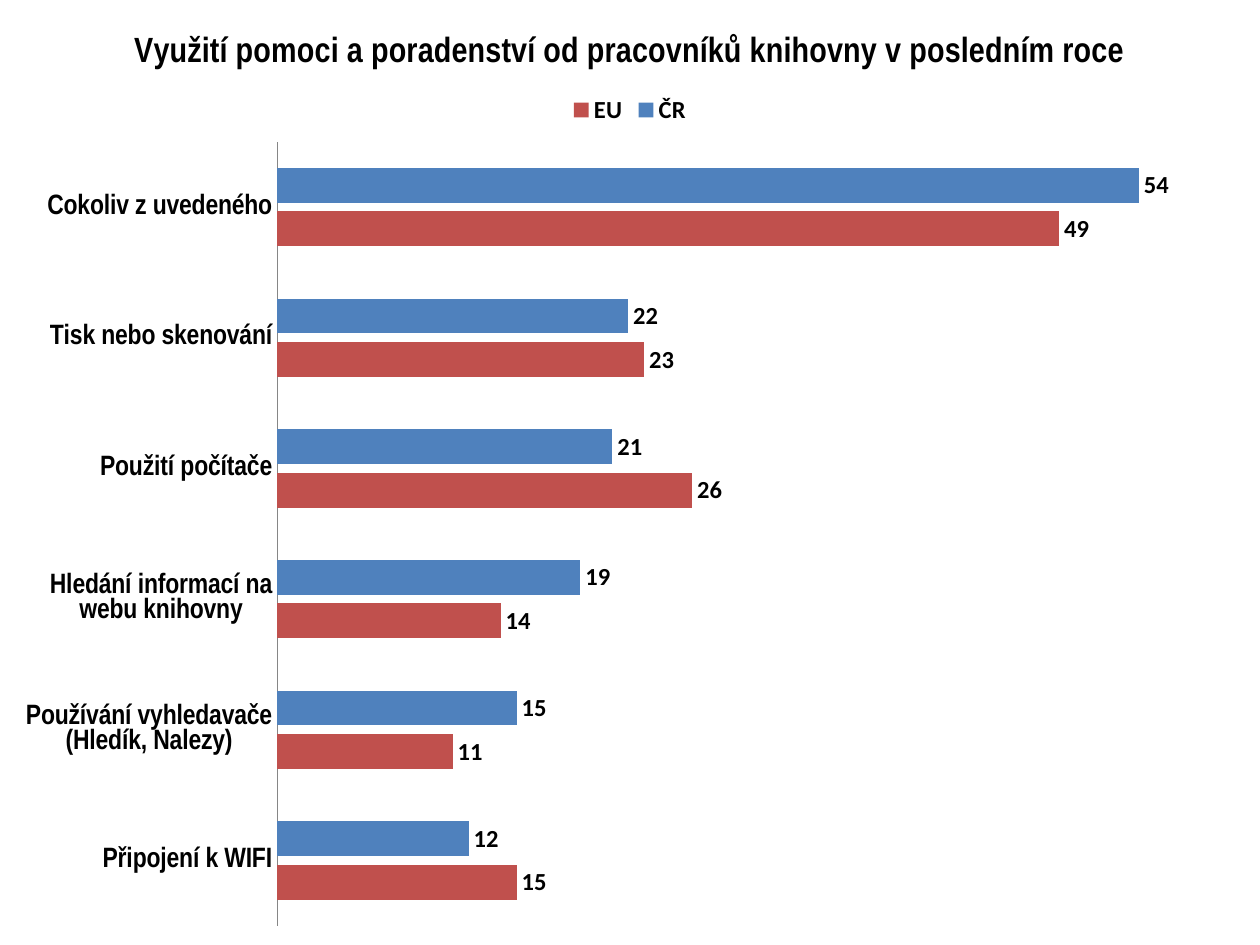
from lxml import etree
from pptx import Presentation
from pptx.chart.data import CategoryChartData
from pptx.dml.color import RGBColor
from pptx.enum.chart import (XL_CHART_TYPE, XL_LABEL_POSITION,
                             XL_LEGEND_POSITION, XL_TICK_MARK)
from pptx.oxml.ns import qn
from pptx.util import Inches, Pt

BAR = XL_CHART_TYPE.BAR_CLUSTERED
OUTSIDE = XL_LABEL_POSITION.OUTSIDE_END
TOP = XL_LEGEND_POSITION.TOP
NONE = XL_TICK_MARK.NONE

BLACK = RGBColor(0x00, 0x00, 0x00)
GREY = RGBColor(0x86, 0x86, 0x86)
BLUE = RGBColor(0x4F, 0x81, 0xBD)
RED = RGBColor(0xC0, 0x50, 0x4D)

TITLE = "Využití pomoci a poradenství od pracovníků knihovny v posledním roce"
HELP = ["Cokoliv z uvedeného", "Tisk nebo skenování", "Použití počítače",
        "Hledání informací na webu knihovny",
        "Používání vyhledavače (Hledík, Nalezy)", "Připojení k WIFI"]
SERIES = [("ČR", BLUE, (54, 22, 21, 19, 15, 12)),
          ("EU", RED, (49, 23, 26, 14, 11, 15))]
# Inner plot area as shares of the chart
AREA = {"x": 0.22, "y": 0.15, "w": 0.76, "h": 0.83}


def style(font, name, size, bold=True):
    font.color.rgb = BLACK
    for key, value in {"name": name, "size": Pt(size), "bold": bold}.items():
        setattr(font, key, value)


# Slide
deck = Presentation()
deck.slide_width, deck.slide_height = Inches(10), Inches(7.5)
slide = deck.slides.add_slide(deck.slide_layouts[6])

# Chart over the whole slide
data = CategoryChartData()
data.categories = HELP
for name, color, values in SERIES:
    data.add_series(name, values)
chart = slide.shapes.add_chart(
    BAR, 0, 0, deck.slide_width, deck.slide_height, data).chart
style(chart.font, "Calibri", 10, False)

# Title
chart.has_title = True
frame = chart.chart_title.text_frame
frame.text = TITLE
style(frame.paragraphs[0].runs[0].font, "Arial Narrow", 20)
chart.chart_title.include_in_layout = False

# Legend
chart.has_legend = True
chart.legend.position = TOP
chart.legend.include_in_layout = False
style(chart.legend.font, "Calibri", 14)

# Axes
rows = chart.category_axis
for key, value in {"reverse_order": True, "major_tick_mark": NONE,
                   "minor_tick_mark": NONE,
                   "has_major_gridlines": False}.items():
    setattr(rows, key, value)
rows.format.line.color.rgb = GREY
style(rows.tick_labels.font, "Arial Narrow", 16)
for key, value in {"visible": False, "has_major_gridlines": False,
                   "minimum_scale": 0, "maximum_scale": 60}.items():
    setattr(chart.value_axis, key, value)

# Bars and their values
plot = chart.plots[0]
for key, value in {"gap_width": 150, "overlap": -25,
                   "vary_by_categories": False}.items():
    setattr(plot, key, value)
for bars, (name, color, values) in zip(plot.series, SERIES):
    bars.format.fill.solid()
    bars.format.fill.fore_color.rgb = color
    bars.invert_if_negative = False
    labels = bars.data_labels
    labels.show_value = True
    labels.position = OUTSIDE
    style(labels.font, "Calibri", 14)

# Fixed plot area
area = chart.element.find(".//" + qn("c:plotArea"))
for old in area.findall(qn("c:layout")):
    area.remove(old)
layout = etree.Element(qn("c:layout"))
manual = etree.SubElement(layout, qn("c:manualLayout"))
parts = {"layoutTarget": "inner", "xMode": "edge", "yMode": "edge", **AREA}
for tag, value in parts.items():
    etree.SubElement(manual, qn("c:" + tag), val=str(value))
area.insert(0, layout)

deck.save("out.pptx")
